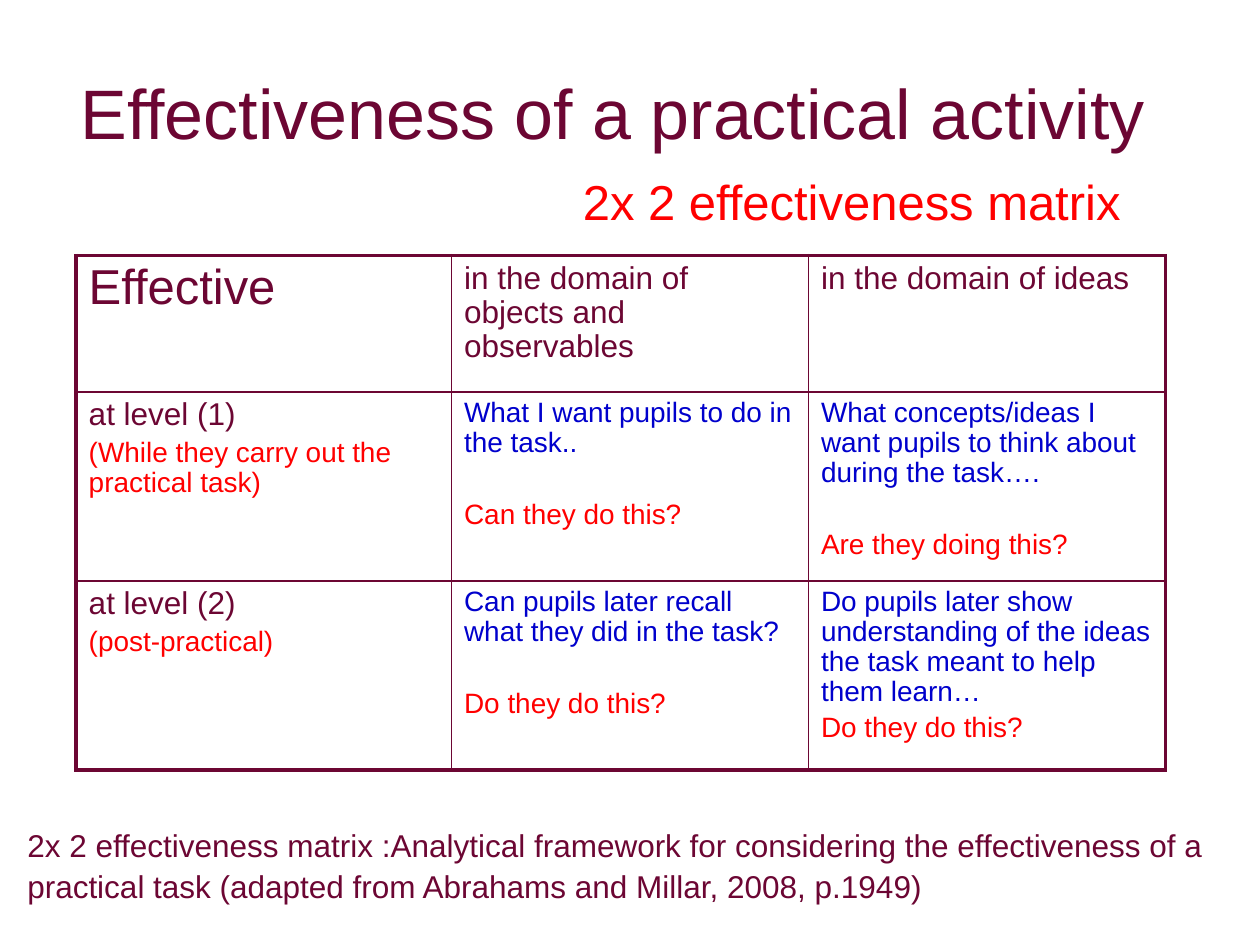
from lxml.etree import SubElement
from pptx import Presentation
from pptx.dml.color import RGBColor
from pptx.enum.text import MSO_ANCHOR as Anchor, MSO_AUTO_SIZE as AutoSize, PP_ALIGN as Align
from pptx.oxml.ns import qn
from pptx.util import Pt

PLUM, RED, BLUE = "6C0633", "FF0000", "0000CC"
THIN, THICK = 1, 2.25
BLANK_LINE_GAP = 24

MATRIX = [
    [
        [("Effective", 28, PLUM, 0)],
        [("in the domain of objects and observables", 18, PLUM, 0)],
        [("in the domain of ideas", 18, PLUM, 0)],
    ],
    [
        [("at level (1)", 18, PLUM, 0),
         ("(While they carry out the practical task)", 16, RED, 3.2)],
        [("What I want pupils to do in the task..", 16, BLUE, 0),
         ("Can they do this?", 16, RED, BLANK_LINE_GAP)],
        [("What concepts/ideas I want pupils to think about during the task….", 16, BLUE, 0),
         ("Are they doing this?", 16, RED, BLANK_LINE_GAP)],
    ],
    [
        [("at level (2)", 18, PLUM, 0),
         ("(post-practical)", 16, RED, 3.2)],
        [("Can pupils later recall what they did in the task?", 16, BLUE, 0),
         ("Do they do this?", 16, RED, BLANK_LINE_GAP)],
        [("Do pupils later show understanding of the ideas the task meant to help them learn…", 16, BLUE, 0),
         ("Do they do this?", 16, RED, 3.2)],
    ],
]


def color(value):
    return RGBColor.from_string(value)


class SlideBuilder:
    font = "Arial"

    def __init__(self, page):
        self.page = page

    def format(self, para, size, fill, spacing=1.0, before=0):
        para.alignment = Align.LEFT
        para.line_spacing = spacing
        para.space_before = Pt(before)
        for span in para.runs:
            span.font.name = self.font
            span.font.size = Pt(size)
            span.font.color.rgb = color(fill)

    def title(self, text, left, top, width, height, size, fill):
        box = self.page.shapes.title
        box.left, box.top, box.width, box.height = map(Pt, (left, top, width, height))
        frame = box.text_frame
        frame.text = text
        frame.auto_size = AutoSize.NONE
        frame.vertical_anchor = Anchor.MIDDLE
        self.format(frame.paragraphs[0], size, fill)

    def text(self, text, left, top, width, height, size, fill, spacing=1.0):
        box = self.page.shapes.add_textbox(*map(Pt, (left, top, width, height)))
        frame = box.text_frame
        frame.word_wrap = True
        frame.text = text
        self.format(frame.paragraphs[0], size, fill, spacing)

    def border(self, cell, side, width):
        line = SubElement(cell._tc.get_or_add_tcPr(), qn(f"a:{side}"), w=str(Pt(width)))
        solid = SubElement(line, qn("a:solidFill"))
        SubElement(solid, qn("a:srgbClr"), val=PLUM)

    def cell(self, cell, paragraphs, borders):
        for side, width in borders.items():
            self.border(cell, side, width)
        cell.fill.background()
        frame = cell.text_frame
        frame.text = "\n".join(text for text, *_ in paragraphs)
        for para, (_, size, fill, before) in zip(frame.paragraphs, paragraphs):
            self.format(para, size, fill, 0.97, before)

    def table(self, rows, left, top, widths, heights):
        frame = self.page.shapes.add_table(
            len(heights), len(widths), *map(Pt, (left, top, sum(widths), sum(heights))))
        table = frame.table
        table.first_row = table.horz_banding = False
        for column, width in zip(table.columns, widths):
            column.width = Pt(width)
        for row, height in zip(table.rows, heights):
            row.height = Pt(height)
        last_row, last_column = len(heights) - 1, len(widths) - 1
        for r, row in enumerate(rows):
            for c, paragraphs in enumerate(row):
                outer = {"lnL": c == 0, "lnR": c == last_column,
                         "lnT": r == 0, "lnB": r == last_row}
                borders = {side: THICK if edge else THIN for side, edge in outer.items()}
                self.cell(table.cell(r, c), paragraphs, borders)


def main():
    deck = Presentation()
    deck.slide_width, deck.slide_height = Pt(720), Pt(540)
    builder = SlideBuilder(deck.slides.add_slide(deck.slide_layouts[5]))
    builder.title("Effectiveness of a practical activity", 39, 29.5, 627, 68.5, 40, PLUM)
    builder.table(MATRIX, 43.5, 146, [214.5, 204, 204], [78, 108, 108])
    builder.text("2x 2 effectiveness matrix", 326, 94.5, 357, 41, 28, RED)
    builder.text(
        "2x 2 effectiveness matrix :Analytical framework for considering the effectiveness "
        "of a practical task (adapted from Abrahams and Millar, 2008, p.1949)",
        8.5, 467.5, 686, 72.5, 18, PLUM, 1.06)
    deck.save("out.pptx")


if __name__ == "__main__":
    main()
